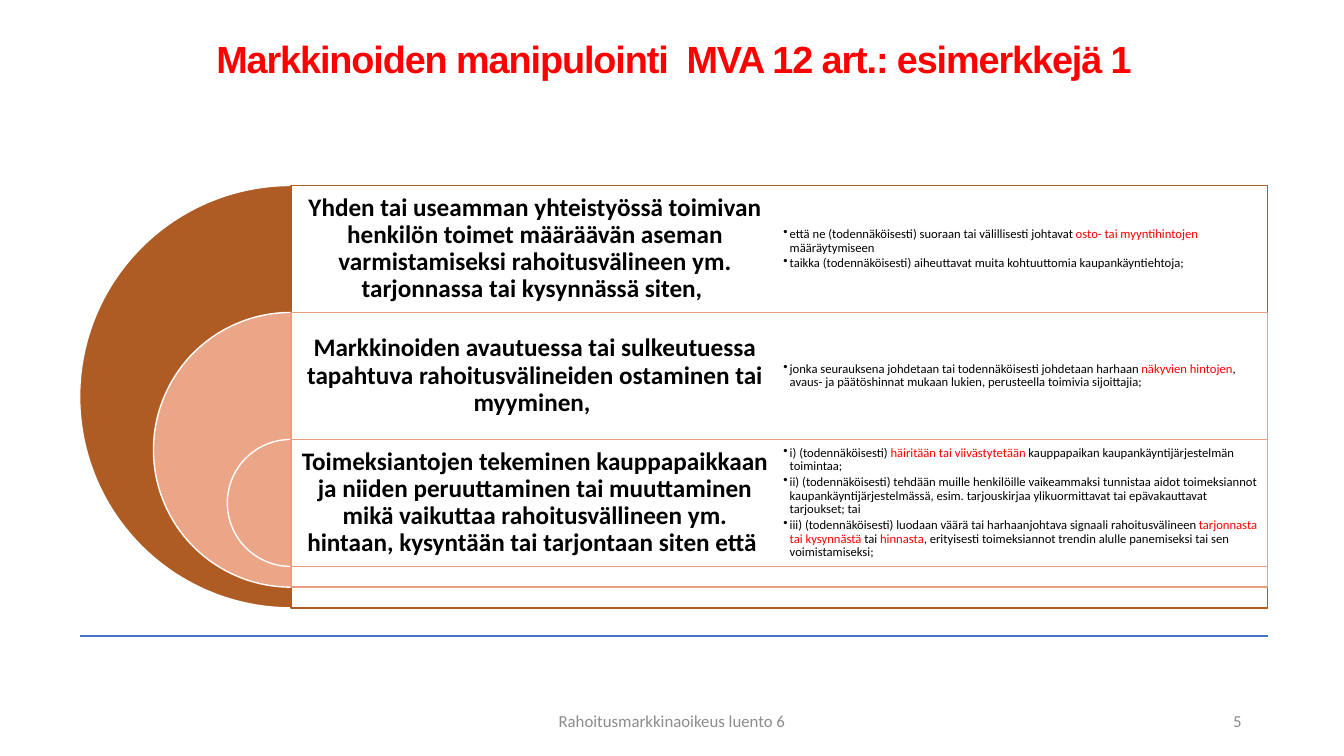
from pptx import Presentation
from pptx.dml.color import RGBColor
from pptx.enum import shapes, text
from pptx.oxml.ns import qn
from pptx.util import Pt
from lxml import etree

RED = RGBColor(0xFF, 0x00, 0x00)
BLACK = RGBColor(0x00, 0x00, 0x00)
WHITE = RGBColor(0xFF, 0xFF, 0xFF)
GREY = RGBColor(0x8C, 0x8C, 0x8C)
BLUE = RGBColor(0x44, 0x72, 0xC4)
BROWN = RGBColor(0xAF, 0x5C, 0x24)
SALMON = RGBColor(0xEB, 0xA5, 0x87)
ORANGE = RGBColor(0xE9, 0x9E, 0x7D)

CENTER, RIGHT = text.PP_ALIGN.CENTER, text.PP_ALIGN.RIGHT
MIDDLE, TOP = text.MSO_ANCHOR.MIDDLE, text.MSO_ANCHOR.TOP

# Each row: pie colour, frame colour, heading, bullets made of (text, colour) runs
ROWS = [
    (BROWN, BROWN,
     "Yhden tai useamman yhteistyössä toimivan henkilön toimet määräävän aseman "
     "varmistamiseksi rahoitusvälineen ym. tarjonnassa tai kysynnässä siten, ",
     [[("että ne (todennäköisesti) suoraan tai välillisesti johtavat ", BLACK),
       ("osto- tai myyntihintojen ", RED), ("määräytymiseen", BLACK)],
      [("taikka (todennäköisesti) aiheuttavat muita kohtuuttomia "
        "kaupankäyntiehtoja;", BLACK)]]),
    (SALMON, ORANGE,
     "Markkinoiden avautuessa tai sulkeutuessa tapahtuva rahoitusvälineiden "
     "ostaminen tai myyminen, ",
     [[("jonka seurauksena johdetaan tai todennäköisesti johdetaan harhaan ", BLACK),
       ("näkyvien hintojen", RED),
       (", avaus- ja päätöshinnat mukaan lukien, perusteella toimivia sijoittajia;",
        BLACK)]]),
    (SALMON, ORANGE,
     "Toimeksiantojen tekeminen kauppapaikkaan ja niiden peruuttaminen tai muuttaminen "
     "mikä vaikuttaa rahoitusvällineen ym. hintaan, kysyntään tai tarjontaan siten että ",
     [[("i) (todennäköisesti) ", BLACK), ("häiritään tai viivästytetään ", RED),
       ("kauppapaikan kaupankäyntijärjestelmän toimintaa;", BLACK)],
      [("ii) (todennäköisesti) tehdään muille henkilöille vaikeammaksi tunnistaa aidot "
        "toimeksiannot kaupankäyntijärjestelmässä, esim. tarjouskirjaa ylikuormittavat "
        "tai epävakauttavat tarjoukset; tai", BLACK)],
      [("iii) (todennäköisesti) luodaan väärä tai harhaanjohtava signaali "
        "rahoitusvälineen ", BLACK), ("tarjonnasta tai kysynnästä ", RED),
       ("tai ", BLACK), ("hinnasta", RED),
       (", erityisesti toimeksiannot trendin alulle panemiseksi tai sen "
        "voimistamiseksi;", BLACK)]]),
]


def add_text_frame(slide, box, inset, anchor):
    tf = slide.shapes.add_textbox(*map(Pt, box)).text_frame
    tf.word_wrap = True
    tf.vertical_anchor = anchor
    tf.margin_left = tf.margin_right = tf.margin_top = tf.margin_bottom = Pt(inset)
    return tf


def add_run(p, words, size, color, bold=False, font="Calibri"):
    r = p.add_run()
    r.text = words
    r.font.size, r.font.bold, r.font.name = Pt(size), bold, font
    r.font.color.rgb = color
    return r


def add_line_of_text(slide, box, words, size, color, align, inset=0, anchor=MIDDLE,
                     spacing=1.0, **font):
    p = add_text_frame(slide, box, inset, anchor).paragraphs[0]
    p.alignment, p.line_spacing = align, spacing
    return add_run(p, words, size, color, **font)


def add_bullets(slide, box, bullets):
    tf = add_text_frame(slide, box, 3, MIDDLE)
    for i, runs in enumerate(bullets):
        p = tf.add_paragraph() if i else tf.paragraphs[0]
        p.line_spacing, p.space_after = 0.9, Pt(1.35)
        pPr = p._p.get_or_add_pPr()
        pPr.set("marL", str(Pt(4.5)))
        pPr.set("indent", str(-Pt(4.5)))
        etree.SubElement(pPr, qn("a:buChar")).set("char", "•")
        for words, color in runs:
            add_run(p, words, 9, color)


def add_filled(slide, kind, box, fill, line):
    sp = slide.shapes.add_shape(kind, *map(Pt, box))
    sp.shadow.inherit = False
    sp.fill.solid()
    sp.fill.fore_color.rgb = fill
    sp.line.color.rgb, sp.line.width = line, Pt(1)
    return sp


def add_stacked_target(slide, left, top, width, height):
    """Nested half circles on the left, each opening into a framed text row."""
    row_h, shrink = 90.7, 105.5
    axis = left + height / 2
    frame_w = width - height / 2
    half = frame_w / 2
    for i, (pie_color, frame_color, heading, bullets) in enumerate(ROWS):
        d = height - i * shrink
        y = top + i * row_h
        pie = add_filled(slide, shapes.MSO_SHAPE.PIE, (axis - d / 2, y, d, d),
                         pie_color, WHITE)
        pie.adjustments[0], pie.adjustments[1] = 54, 162  # 90° to 270°
        frame = add_filled(slide, shapes.MSO_SHAPE.RECTANGLE, (axis, y, frame_w, d),
                           WHITE, frame_color)
        rgb = frame.fill._xPr.find(".//" + qn("a:srgbClr"))
        etree.SubElement(rgb, qn("a:alpha")).set("val", "90000")
        add_line_of_text(slide, (axis, y, half, row_h), heading, 18, BLACK, CENTER,
                         inset=5, spacing=0.9, bold=True)
        add_bullets(slide, (axis + half, y, half, row_h), bullets)


def add_title(slide, left, top, width, height):
    r = add_line_of_text(slide, (left, top, width, height),
                         "Markkinoiden manipulointi  MVA 12 art.: esimerkkejä 1",
                         27, RED, CENTER, anchor=TOP, spacing=0.85,
                         bold=True, font="Arial")
    r.font._element.set("spc", "-80")


def add_rule(slide, left, y, width):
    line = slide.shapes.add_connector(shapes.MSO_CONNECTOR.STRAIGHT,
                                      Pt(left), Pt(y), Pt(left + width), Pt(y))
    line.line.color.rgb, line.line.width = BLUE, Pt(1)
    etree.SubElement(line._element.spPr, qn("a:effectLst"))


def add_footer(slide, top, height):
    add_line_of_text(slide, (318, top, 324, height), "Rahoitusmarkkinaoikeus luento 6",
                     12, GREY, CENTER, inset=7.2)
    add_line_of_text(slide, (678, top, 216, height), "5", 12, GREY, RIGHT, inset=7.2)


def main():
    prs = Presentation()
    prs.slide_width, prs.slide_height = Pt(960), Pt(540)
    slide = prs.slides.add_slide(prs.slide_layouts[6])
    left, width = 56.9, 848.6
    add_rule(slide, left, 454.3, width)
    add_title(slide, left, 30.2, width, 94.3)
    add_stacked_target(slide, left, 132.5, width, 301.7)
    add_footer(slide, 500.5, 28.8)
    prs.save("out.pptx")


if __name__ == "__main__":
    main()
